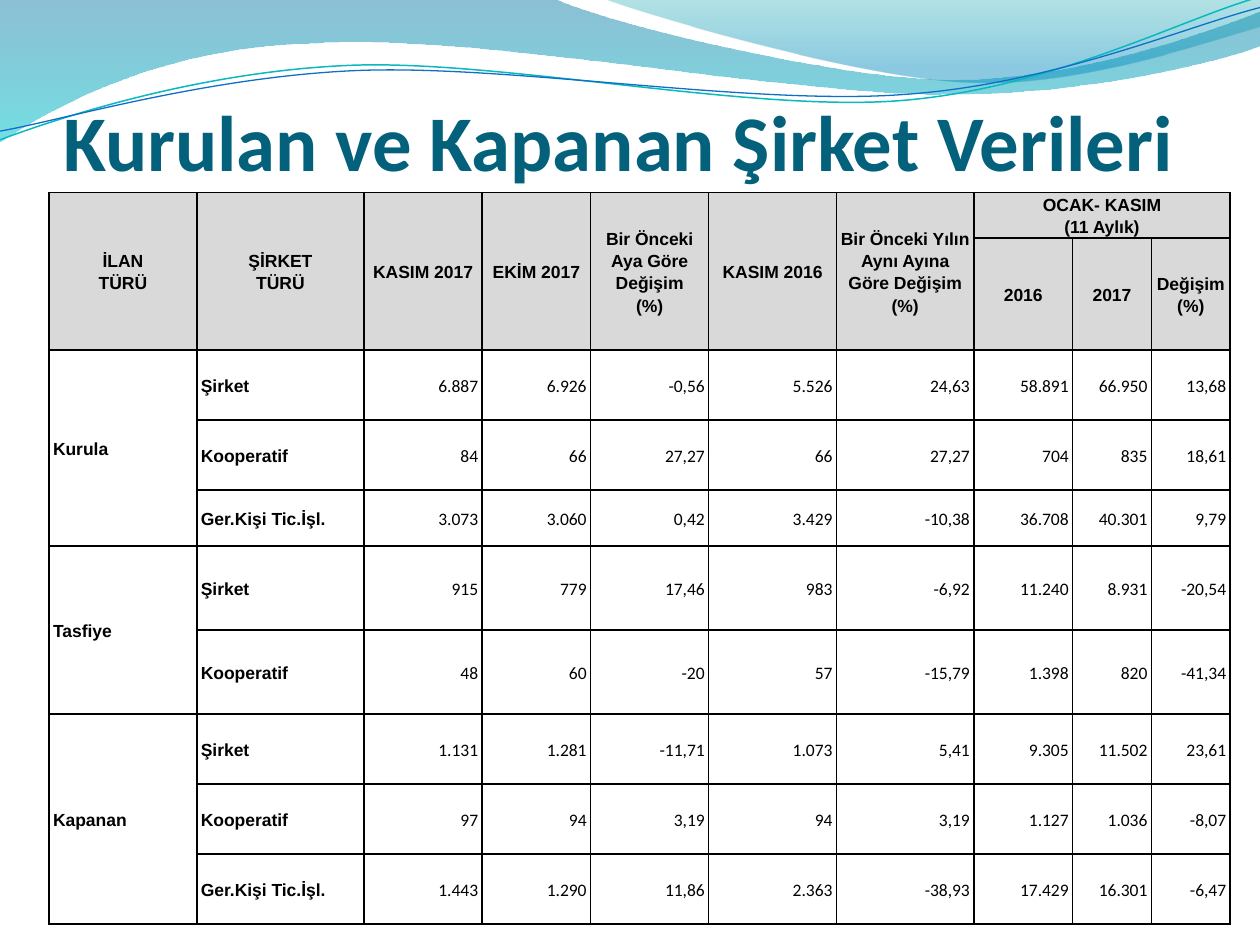
import lxml.etree
import pptx
import pptx.dml.color
import pptx.enum.text
import pptx.oxml
import pptx.oxml.ns
import pptx.util

Pt = pptx.util.Pt
qn = pptx.oxml.ns.qn
ALIGN = pptx.enum.text.PP_ALIGN
ANCHOR = pptx.enum.text.MSO_ANCHOR

# Content: "\v" breaks a line, "\n" starts a paragraph
TITLE = "Kurulan ve Kapanan Şirket Verileri"
HEADERS = ["İLAN\vTÜRÜ", "ŞİRKET\vTÜRÜ", "KASIM 2017", "EKİM 2017",
           "Bir Önceki Aya Göre Değişim\v(%)", "KASIM 2016",
           "Bir Önceki Yılın Aynı Ayına Göre Değişim (%)"]
PERIOD = "OCAK- KASIM\n(11 Aylık)"
PERIOD_HEADERS = ["2016", "2017", "Değişim (%)"]
GROUPS = [
    ("Kurula", [
        ("Şirket", "6.887", "6.926", "-0,56", "5.526", "24,63", "58.891", "66.950", "13,68"),
        ("Kooperatif", "84", "66", "27,27", "66", "27,27", "704", "835", "18,61"),
        ("Ger.Kişi Tic.İşl.", "3.073", "3.060", "0,42", "3.429", "-10,38", "36.708", "40.301", "9,79"),
    ]),
    ("Tasfiye", [
        ("Şirket", "915", "779", "17,46", "983", "-6,92", "11.240", "8.931", "-20,54"),
        ("Kooperatif", "48", "60", "-20", "57", "-15,79", "1.398", "820", "-41,34"),
    ]),
    ("Kapanan", [
        ("Şirket", "1.131", "1.281", "-11,71", "1.073", "5,41", "9.305", "11.502", "23,61"),
        ("Kooperatif", "97", "94", "3,19", "94", "3,19", "1.127", "1.036", "-8,07"),
        ("Ger.Kişi Tic.İşl.", "1.443", "1.290", "11,86", "2.363", "-38,93", "17.429", "16.301", "-6,47"),
    ]),
]
COLUMNS = [84.5, 95.5, 67.5, 62, 67.5, 73, 78.5, 56.5, 45, 45]
ROWS = [26, 64, 40, 40, 32, 48, 48, 40, 40, 40]

THEME = {
    "title": "04617B", "text": "000000", "header": "D9D9D9", "border": "000000",
    "title_size": 45, "table_size": 10, "label_font": "Arial", "number_font": "Calibri",
}

# Waves: a start point, then lines (x, y) and curves (two handles and an end)
BANDS = [
    ([(0, 0), (316.8, -0.7),
      (342.7, 12.2, 478.1, 45.4, 545.8, 45.4), (614.2, 45.4, 689.8, 18.7, 720, 6.5),
      (720.7, 25.9),
      (707.8, 31.7, 626.4, 54.7, 537.1, 54), (447.8, 54, 275, 20.2, 185, 24.5),
      (92.9, 25.9, 33.1, 59.8, -0.7, 81.4)],
     [(0, "0074A1", 45), (1, "00C6CF", 55)]),
    ([(344.9, -0.7),
      (366.5, 7.9, 491, 44.6, 553.7, 46.8), (616.3, 49.7, 691.9, 23, 720, 15.1),
      (720, 0)],
     [(0, "00A1A9", 30), (0.8, "008BBF", 45)]),
]
STRANDS = [
    ([(0, 79.9), (34.6, 67, 113.8, 41, 199.4, 37.4),
      (284.4, 33.8, 427, 64.1, 513.4, 57.6), (599.8, 51.1, 675.4, 10.8, 718.6, -1.4)],
     "0AB8BF", 0.85),
    ([(0, 74.9), (33.8, 69.1, 118.1, 43.9, 203.8, 40.3),
      (290.2, 36.7, 429.8, 60.5, 516.2, 54), (601.9, 48.2, 677.5, 15.1, 720, 4.3)],
     "0F6FC6", 0.75),
]


def rgb(value):
    return pptx.dml.color.RGBColor.from_string(value)


def add_wave(page, segments, close):
    """Join the end points by lines, then bend the lines that have handles."""
    points = [(Pt(segment[-2]), Pt(segment[-1])) for segment in segments]
    builder = page.shapes.build_freeform(*points[0])
    builder.add_line_segments(points[1:], close=close)
    wave = builder.convert_to_shape()
    wave.shadow.inherit = False
    for line, segment in zip(list(wave.element.iter(qn("a:lnTo"))), segments[1:]):
        if len(segment) == 6:
            line.clear()
            curve = lxml.etree.SubElement(line.getparent(), qn("a:cubicBezTo"))
            line.getparent().replace(line, curve)
            for x, y in zip(segment[::2], segment[1::2]):
                lxml.etree.SubElement(curve, qn("a:pt"), x=str(Pt(x) - wave.left),
                                      y=str(Pt(y) - wave.top))
    return wave


def add_band(page, segments, stops):
    band = add_wave(page, segments, True)
    band.line.fill.background()
    band.fill.gradient()
    band.fill.gradient_angle = 270
    for stop, (position, color, _) in zip(band.fill.gradient_stops, stops):
        stop.position = position
        stop.color.rgb = rgb(color)
    for node, (_, _, opacity) in zip(band.element.spPr.iter(qn("a:srgbClr")), stops):
        lxml.etree.SubElement(node, qn("a:alpha"), val=str(opacity * 1000))
    return band


def add_strand(page, segments, color, width):
    strand = add_wave(page, segments, False)
    strand.fill.background()
    strand.line.color.rgb = rgb(color)
    strand.line.width = Pt(width)
    return strand


def move_to_layout(page, waves):
    """Make the waves the backdrop of the layout, behind its placeholders."""
    tree = page.slide_layout.shapes.element
    for index, wave in enumerate(waves):
        wave.element.nvSpPr.cNvPr.set("id", str(100 + index))
        tree.insert(2 + index, wave.element)


def add_title(page):
    box = page.shapes.title
    box.left, box.top, box.width, box.height = Pt(36), Pt(56), Pt(654), Pt(51)
    frame = box.text_frame
    frame.text = TITLE
    frame.auto_size = pptx.enum.text.MSO_AUTO_SIZE.NONE
    frame.vertical_anchor = ANCHOR.BOTTOM
    frame.margin_left = frame.margin_right = frame.margin_bottom = 0
    frame.margin_top = Pt(3.6)
    para = frame.paragraphs[0]
    para.alignment = ALIGN.LEFT
    para.line_spacing = 1.0
    para.font.name, para.font.size, para.font.bold = "Calibri", Pt(THEME["title_size"]), True
    para.font.color.rgb = rgb(THEME["title"])


def style_cell(cell, row, column):
    header, number = row < 2, row >= 2 and column >= 2
    cell.margin_left = cell.margin_right = Pt(2.3)
    cell.margin_top = cell.margin_bottom = 0
    cell.vertical_anchor = ANCHOR.MIDDLE
    for para in cell.text_frame.paragraphs:
        para.alignment = ALIGN.CENTER if header else ALIGN.RIGHT if number else ALIGN.LEFT
        para.line_spacing = 1.15
        para.font.name = THEME["number_font" if number else "label_font"]
        para.font.size, para.font.bold = Pt(THEME["table_size"]), not number
        para.font.color.rgb = rgb(THEME["text"])
    properties = cell._tc.get_or_add_tcPr()
    for side in ("lnL", "lnR", "lnT", "lnB"):
        properties.append(pptx.oxml.parse_xml(
            f'<a:{side} {pptx.oxml.ns.nsdecls("a")} w="{Pt(1)}"><a:solidFill>'
            f'<a:srgbClr val="{THEME["border"]}"/></a:solidFill></a:{side}>'))
    if header:
        cell.fill.solid()
        cell.fill.fore_color.rgb = rgb(THEME["header"])
    else:
        cell.fill.background()


def add_data_table(page):
    table = page.shapes.add_table(len(ROWS), len(COLUMNS), Pt(28), Pt(110),
                                  Pt(sum(COLUMNS)), Pt(sum(ROWS))).table
    table.first_row = table.horz_banding = False
    for column, width in zip(table.columns, COLUMNS):
        column.width = Pt(width)
    for row, height in zip(table.rows, ROWS):
        row.height = Pt(height)
    # Headers
    for column, text in enumerate(HEADERS):
        table.cell(0, column).merge(table.cell(1, column))
        table.cell(0, column).text = text
    first = len(HEADERS)
    table.cell(0, first).merge(table.cell(0, len(COLUMNS) - 1))
    table.cell(0, first).text = PERIOD
    for column, text in enumerate(PERIOD_HEADERS, first):
        table.cell(1, column).text = text
    # Groups
    top = 2
    for name, records in GROUPS:
        table.cell(top, 0).merge(table.cell(top + len(records) - 1, 0))
        table.cell(top, 0).text = name
        for row, record in enumerate(records, top):
            for column, text in enumerate(record, 1):
                table.cell(row, column).text = text
        top += len(records)
    for row in range(len(ROWS)):
        for column in range(len(COLUMNS)):
            style_cell(table.cell(row, column), row, column)


def main():
    deck = pptx.Presentation()
    deck.slide_width, deck.slide_height = Pt(720), Pt(540)
    page = deck.slides.add_slide(deck.slide_layouts[5])
    waves = [add_band(page, *band) for band in BANDS]
    waves += [add_strand(page, *strand) for strand in STRANDS]
    move_to_layout(page, waves)
    add_title(page)
    add_data_table(page)
    deck.save("out.pptx")


if __name__ == "__main__":
    main()
